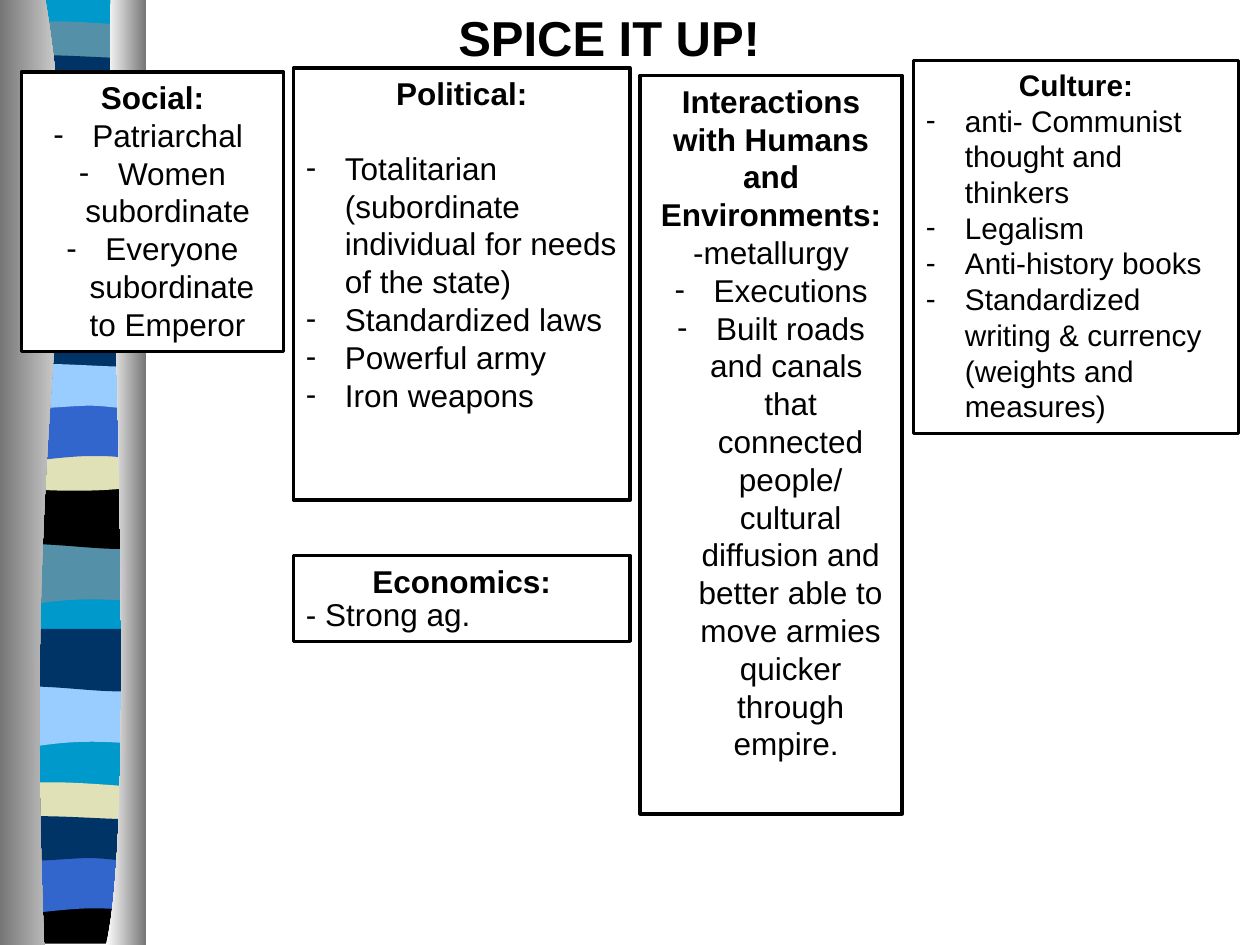
from lxml import etree
from pptx import Presentation
from pptx.dml.color import RGBColor
from pptx.enum.shapes import MSO_SHAPE
from pptx.enum.text import MSO_ANCHOR, PP_ALIGN
from pptx.oxml.ns import qn
from pptx.util import Pt

PX = 9144  # 100 px to the inch
FONT = "Arial"
RECT = MSO_SHAPE.RECTANGLE
TOP = MSO_ANCHOR.TOP
LEFT, CENTER = PP_ALIGN.LEFT, PP_ALIGN.CENTER
HANGING = 31

COLORS = {
    "white": "FFFFFF", "black": "000000", "teal": "0099CC", "steel": "5490A8",
    "sand": "E1E1B7", "blue": "3366CC", "navy": "003366", "sky": "99CCFF",
    "grey": "767676",
}

# Outlines: a pair is a line end, six numbers are a cubic curve
BANDS = {
    "wave_low": [(108, 0), (108, 47), (33, 39, 18, 55, 0, 47), (0, 0)],
    "ripple_low": [(108, 0), (108, 47), (90, 55, 33, 42, 0, 47), (0, 0)],
    "crest": [(108, 5), (108, 29), (90, 34, 18, 34, 0, 29), (0, 5),
              (7, 0, 23, 1, 41, 1), (59, 1, 94, 4, 108, 5)],
    "bowl": [(108, 0), (108, 32), (90, 38, 18, 38, 0, 32), (0, 0),
             (66, 5, 85, 0, 108, 0)],
    "floor": [(108, 0), (108, 37), (0, 37), (0, 0), (66, 5, 85, 0, 108, 0)],
    "arch": [(108, 0), (108, 47), (91, 42, 84, 42, 66, 42),
             (48, 42, 16, 47, 0, 47), (0, 0)],
    "swell": [(108, 5), (108, 36), (101, 41, 84, 36, 66, 36),
              (48, 36, 11, 41, 0, 36), (0, 5), (15, 0, 73, 5, 91, 5),
              (110, 5, 105, 5, 108, 5)],
}

# Each cycle repeats the outlines, with its own tops and colours
CYCLES = [
    [("wave_low", 185, "steel"), ("ripple_low", 141, "sand"), ("crest", 16, "steel"),
     ("bowl", 108, "black"), ("arch", 74, "blue"), ("swell", 41, "navy")],
    [("wave_low", 431, "steel"), ("ripple_low", 386, "black"), ("crest", 262, "navy"),
     ("bowl", 353, "sand"), ("arch", 320, "blue"), ("swell", 286, "sky")],
    [("wave_low", 544, "sky"), ("ripple_low", 499, "navy"), ("crest", 620, "sand"),
     ("floor", 712, "black"), ("arch", 679, "blue"), ("swell", 645, "navy")],
]

BASE = [(108, 0), (108, 747), (0, 747), (0, 0)]
LEFT_EDGE = [(36, 0), (72, 216, 17, 296, 35, 750), (0, 750), (0, 0)]
RIGHT_EDGE = [(4, 0), (0, 125, 27, 646, 0, 750), (32, 750), (32, 0)]

# Box, text size, gap after heading in points, heading, lines: (text, align, bulleted)
CARDS = [
    ((17, 57, 208, 222), 18, 0, "Social:", [
        ("Patriarchal ", CENTER, True),
        ("Women subordinate ", CENTER, True),
        ("Everyone subordinate to Emperor ", CENTER, True)]),
    ((233, 54, 267, 343), 18, 21, "Political:", [
        ("Totalitarian (subordinate individual for needs of the state)", LEFT, True),
        ("Standardized laws", LEFT, True),
        ("Powerful army", LEFT, True),
        ("Iron weapons", LEFT, True)]),
    ((508, 60, 208, 586), 18, 0, "Interactions with Humans and Environments:", [
        ("-metallurgy", CENTER, False),
        ("Executions", CENTER, True),
        ("Built roads and canals  that connected people/ cultural diffusion and "
         "better able to move armies quicker through empire. ", CENTER, True)]),
    ((725, 48, 258, 296), 17, 0, "Culture:", [
        ("anti- Communist thought and thinkers", LEFT, True),
        ("Legalism", LEFT, True),
        ("Anti-history books", LEFT, True),
        ("Standardized writing & currency (weights and measures)", LEFT, True)]),
    ((233, 441, 267, 68), 18, 0, "Economics:", [
        ("- Strong ag.", LEFT, False)]),
]


def rgb(name):
    return RGBColor.from_string(COLORS[name])


def add_outline(s, x, y, outline):
    """Build straight lines through all points, then merge triples into curves."""
    points = [((x + seg[i]) * PX, (y + seg[i + 1]) * PX)
              for seg in outline for i in range(0, len(seg), 2)]
    builder = s.shapes.build_freeform(*points[0], scale=1.0)
    builder.add_line_segments(points[1:], close=True)
    sp = builder.convert_to_shape()
    lines = iter(list(sp._element.iter(qn("a:lnTo"))))
    for seg in outline[1:]:
        line = next(lines)
        if len(seg) == 6:
            curve = etree.Element(qn("a:cubicBezTo"))
            line.addprevious(curve)
            for part in (line, next(lines), next(lines)):
                curve.append(part[0])
                part.getparent().remove(part)
    sp.shadow.inherit = False
    sp.line.fill.background()
    return sp


def fill_solid(sp, color):
    sp.fill.solid()
    sp.fill.fore_color.rgb = rgb(color)


def fill_gradient(sp, *colors):
    sp.fill.gradient()
    sp.fill.gradient_angle = 0
    for stop, color in zip(sp.fill.gradient_stops, colors):
        stop.color.rgb = rgb(color)


def add_ribbon(s, x, y):
    # Base strip and wavy bands
    fill_solid(add_outline(s, x + 5, y, BASE), "teal")
    for cycle in CYCLES:
        for band, top, color in cycle:
            fill_solid(add_outline(s, x + 5, y + top, BANDS[band]), color)
    # Shaded edges
    fill_gradient(add_outline(s, x, y, LEFT_EDGE), "grey", "white")
    fill_gradient(add_outline(s, x + 84, y, RIGHT_EDGE), "white", "grey")


def write(p, text, size, align, bold=False):
    p.text = text
    p.alignment = align
    font = p.runs[0].font
    font.name, font.size, font.bold = FONT, Pt(size), bold
    font.color.rgb = rgb("black")


def add_dash(p):
    pPr = p._p.get_or_add_pPr()
    pPr.set("marL", str(HANGING * PX))
    pPr.set("indent", str(-HANGING * PX))
    etree.SubElement(pPr, qn("a:buFont")).set("typeface", FONT)
    etree.SubElement(pPr, qn("a:buChar")).set("char", "-")


def add_card(s, box, size, gap, heading, lines):
    sp = s.shapes.add_shape(RECT, *(v * PX for v in box))
    sp.shadow.inherit = False
    fill_solid(sp, "white")
    sp.line.color.rgb = rgb("black")
    sp.line.width = Pt(2)
    tf = sp.text_frame
    tf.word_wrap = True
    tf.vertical_anchor = TOP
    p = tf.paragraphs[0]
    write(p, heading, size, CENTER, bold=True)
    if gap:
        p.space_after = Pt(gap)
    for text, align, bulleted in lines:
        p = tf.add_paragraph()
        write(p, text, size, align)
        if bulleted:
            add_dash(p)
        elif align == LEFT:
            p.line_spacing = 0.9


def add_title(s, box, text):
    tf = s.shapes.add_textbox(*(v * PX for v in box)).text_frame
    tf.word_wrap = True
    write(tf.paragraphs[0], text, 28, CENTER, bold=True)


def main():
    prs = Presentation()
    prs.slide_width, prs.slide_height = 1000 * PX, 750 * PX
    s = prs.slides.add_slide(prs.slide_layouts[6])
    add_ribbon(s, 0, 0)
    for card in CARDS:
        add_card(s, *card)
    add_title(s, (92, 1, 783, 57), "SPICE IT UP!")
    prs.save("out.pptx")


if __name__ == "__main__":
    main()
